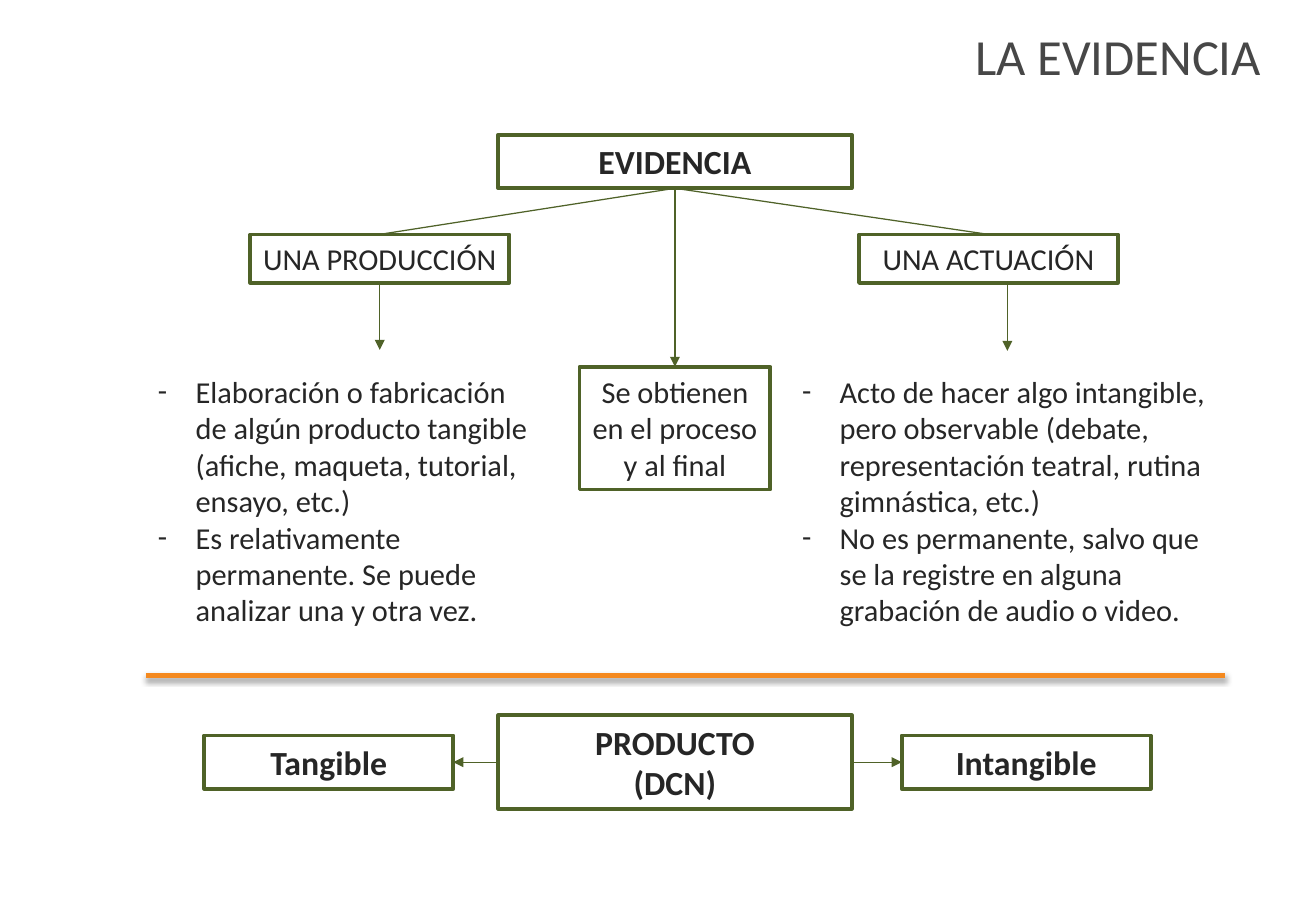
import pptx
import pptx.util
import pptx.dml.color
import pptx.enum.shapes
import pptx.enum.text
import pptx.oxml
import pptx.oxml.ns

GREEN, ORANGE, INK, GREY = "4F6228", "F4891E", "262626", "474747"
TOP, LEFT, BOTTOM, RIGHT = range(4)
LIST_TOP, LIST_HEIGHT = 40.27, 29.6
AXIS = 51.29

# Content; every length is a percentage of the slide's width or height
TITLE = ("LA EVIDENCIA", (4.8, 1.07, 91.97, 10))
# name: lines, centre x, top, width, height, size, bold
BOXES = {
    "evidence": (["EVIDENCIA"], AXIS, 14.8, 26.87, 5.87, 20, True),
    "production": (["UNA PRODUCCIÓN"], 28.86, 25.73, 19.67, 5.33, 18, False),
    "performance": (["UNA ACTUACIÓN"], 75.11, 25.73, 19.67, 5.33, 18, False),
    "process": (["Se obtienen en el proceso y al final"],
                AXIS, LIST_TOP, 14.5, 13.47, 18, False),
    "product": (["PRODUCTO", "(DCN)"], AXIS, 78.53, 26.87, 10.27, 20, True),
    "tangible": (["Tangible"], 24.98, 80.73, 18.93, 5.87, 20, True),
    "intangible": (["Intangible"], 77.98, 80.73, 18.93, 5.87, 20, True),
}
# left, width, items
LISTS = [
    (11.08, 30.19, [
        "Elaboración o fabricación de algún producto tangible "
        "(afiche, maqueta, tutorial, ensayo, etc.)",
        "Es relativamente permanente. Se puede analizar una y otra vez."]),
    (60.02, 33.06, [
        "Acto de hacer algo intangible, pero observable (debate, "
        "representación teatral, rutina gimnástica, etc.)",
        "No es permanente, salvo que se la registre en alguna "
        "grabación de audio o video."]),
]
# from box, side, to box, side, arrowhead
JOINS = [
    ("evidence", BOTTOM, "production", TOP, False),
    ("evidence", BOTTOM, "performance", TOP, False),
    ("evidence", BOTTOM, "process", TOP, True),
    ("product", LEFT, "tangible", RIGHT, True),
    ("product", RIGHT, "intangible", LEFT, True),
]
# x, top, bottom of the arrows above the lists
DROPS = [(28.86, 31.07, 38.4), (76.55, 31.2, 38.53)]
DIVIDER = (11.08, 93.07, 74.13)

prs = pptx.Presentation()
prs.slide_width = pptx.util.Inches(10.83)
prs.slide_height = pptx.util.Inches(7.5)
s = prs.slides.add_slide(prs.slide_layouts[3])


def px(share):
    return round(prs.slide_width * share / 100)


def py(share):
    return round(prs.slide_height * share / 100)


def color(value):
    return pptx.dml.color.RGBColor.from_string(value)


def xml(tag, inner="", **attrs):
    pairs = "".join(f' {key}="{value}"' for key, value in attrs.items())
    ns = pptx.oxml.ns.nsdecls("a")
    return pptx.oxml.parse_xml(f"<a:{tag} {ns}{pairs}>{inner}</a:{tag}>")


def place(sp, left, top, width, height):
    sp.left, sp.top, sp.width, sp.height = px(left), py(top), px(width), py(height)


def write(p, text, ink=INK, **font):
    r = p.add_run()
    r.text = text
    r.font.color.rgb = color(ink)
    for name, value in {"name": "Calibri", **font}.items():
        setattr(r.font, name, value)


def line(x1, y1, x2, y2, ink=GREEN, width=0.75, arrow=False, shadow=""):
    sp = s.shapes.add_connector(pptx.enum.shapes.MSO_CONNECTOR.STRAIGHT,
                                px(x1), py(y1), px(x2), py(y2))
    sp.line.color.rgb = color(ink)
    sp.line.width = pptx.util.Pt(width)
    if arrow:
        sp.line._get_or_add_ln().append(xml("tailEnd", type="triangle"))
    sp._element.spPr.append(xml("effectLst", shadow))
    return sp


# Title
text, area = TITLE
sp = s.shapes.title
place(sp, *area)
p = sp.text_frame.paragraphs[0]
p.alignment = pptx.enum.text.PP_ALIGN.RIGHT
write(p, text, GREY, size=pptx.util.Pt(30))

# Boxes
shapes = {}
for name, (lines, cx, top, width, height, size, bold) in BOXES.items():
    sp = s.shapes.add_shape(pptx.enum.shapes.MSO_SHAPE.RECTANGLE, 0, 0, 0, 0)
    place(sp, cx - width / 2, top, width, height)
    sp.shadow.inherit = False
    sp.fill.background()
    sp.line.color.rgb = color(GREEN)
    sp.line.width = pptx.util.Pt(2.25)
    tf = sp.text_frame
    tf.word_wrap = True
    tf.auto_size = pptx.enum.text.MSO_AUTO_SIZE.SHAPE_TO_FIT_TEXT
    tf.vertical_anchor = pptx.enum.text.MSO_ANCHOR.TOP
    for i, text in enumerate(lines):
        p = tf.add_paragraph() if i else tf.paragraphs[0]
        p.alignment = pptx.enum.text.PP_ALIGN.CENTER
        write(p, text, size=pptx.util.Pt(size), bold=bold)
    shapes[name] = sp

# Lists
indent = pptx.util.Inches(0.31)
for sp, (left, width, items) in zip(list(s.placeholders)[1:], LISTS):
    place(sp, left, LIST_TOP, width, LIST_HEIGHT)
    tf = sp.text_frame
    tf.auto_size = pptx.enum.text.MSO_AUTO_SIZE.NONE
    for i, text in enumerate(items):
        p = tf.add_paragraph() if i else tf.paragraphs[0]
        pPr = p._p.get_or_add_pPr()
        pPr.set("marL", str(indent))
        pPr.set("indent", str(-indent))
        pPr.append(xml("buFont", typeface="Calibri"))
        pPr.append(xml("buChar", char="-"))
        p.space_before = pptx.util.Pt(0)
        write(p, text, size=pptx.util.Pt(18))

# Connectors
for start, start_side, end, end_side, arrow in JOINS:
    sp = line(0, 0, 0, 0, arrow=arrow)
    sp.begin_connect(shapes[start], start_side)
    sp.end_connect(shapes[end], end_side)
for x, top, bottom in DROPS:
    line(x, top, x, bottom, arrow=True)

# Divider with a soft shadow
x1, x2, y = DIVIDER
shadow = ('<a:outerShdw blurRad="39370" dist="22860" dir="5400000" rotWithShape="0">'
          '<a:srgbClr val="000000"><a:alpha val="35000"/></a:srgbClr></a:outerShdw>')
line(x1, y, x2, y, ORANGE, 3, shadow=shadow)

prs.save("out.pptx")
